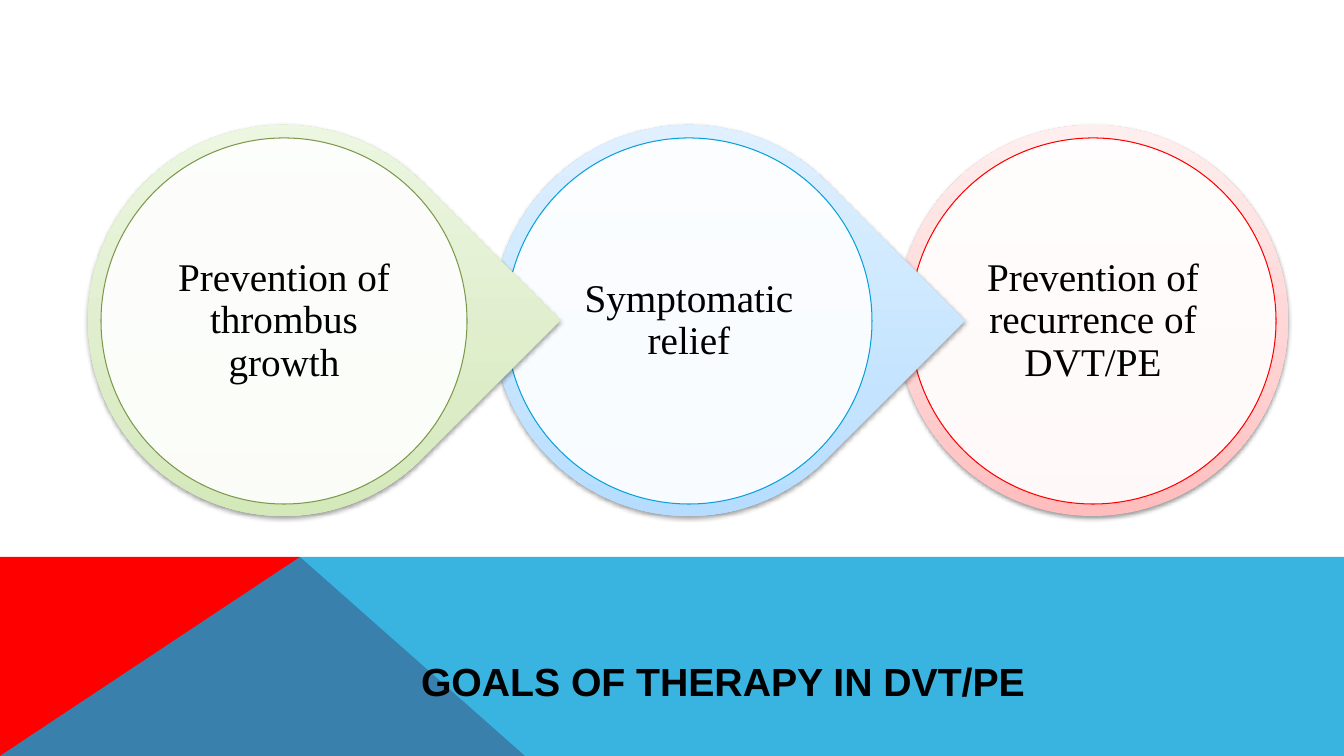
from pptx import Presentation
from pptx.dml.color import RGBColor
from pptx.enum.shapes import MSO_SHAPE as Shape
from pptx.enum.text import MSO_ANCHOR as Anchor, PP_ALIGN as Align
from pptx.oxml import parse_xml
from pptx.oxml.ns import nsdecls
from pptx.util import Emu, Pt

BLACK = RGBColor(0x00, 0x00, 0x00)
WHITE = RGBColor(0xFF, 0xFF, 0xFF)
RED = RGBColor(0xFF, 0x00, 0x00)
BLUE = RGBColor(0x08, 0xA1, 0xD9)
GREEN = RGBColor(0x7C, 0x98, 0x4A)
# Gradient colours run from bottom to top
ROSE = [RGBColor(0xFF, 0xBD, 0xBD), RGBColor(0xFF, 0xD1, 0xD1), RGBColor(0xFF, 0xEE, 0xEE)]
SKY = [RGBColor(0xAB, 0xD8, 0xFF), RGBColor(0xC3, 0xE3, 0xFF), RGBColor(0xE8, 0xF4, 0xFF)]
LIME = [RGBColor(0xCD, 0xE6, 0xAF), RGBColor(0xDC, 0xEC, 0xC7), RGBColor(0xF1, 0xF9, 0xE9)]
PX = 914400 / 100.8
NS = nsdecls("a")


def px(*nums):
    return [Emu(round(n * PX)) for n in nums]


def paint(shape, color, alpha=100):
    """Fill a shape with one colour at the given opacity in percent."""
    shape.shadow.inherit = False
    shape.fill.solid()
    shape.fill.fore_color.rgb = color
    if alpha < 100:
        tint = shape.fill._xPr.solidFill[0]
        tint.append(parse_xml(f'<a:alpha {NS} val="{alpha * 1000}"/>'))


deck = Presentation()
deck.slide_width, deck.slide_height = px(1344, 756)
slide = deck.slides.add_slide(deck.slide_layouts[5])
shapes = slide.shapes
title = shapes.title

# Bottom band: red wedge under a translucent blue sheet, both behind the title
bands = [
    ([(0, 756), (0, 557), (300, 557), (525, 756)], RED, 100),
    ([(0, 756), (300, 557), (1344, 557), (1344, 756)], BLUE, 80),
]
for points, color, alpha in bands:
    path = shapes.build_freeform(*points[0], scale=PX)
    path.add_line_segments(points[1:], close=True)
    band = path.convert_to_shape()
    paint(band, color, alpha)
    band.line.fill.background()
    title._element.addprevious(band._element)

title.left, title.top, title.width, title.height = px(170, 650, 1106, 61)
frame = title.text_frame
frame.text = "GOALS OF THERAPY IN DVT/PE"
frame.vertical_anchor = Anchor.MIDDLE
head = frame.paragraphs[0]
head.alignment = Align.CENTER
head.font.name, head.font.size, head.font.bold = "Arial", Pt(28), True
head.font.color.rgb = BLACK

# Goals, drawn from right to left so that each tip covers the next ring
goals = [
    ("Prevention of thrombus growth", Shape.TEAR, LIME, GREEN),
    ("Symptomatic relief", Shape.TEAR, SKY, BLUE),
    ("Prevention of recurrence of DVT/PE", Shape.OVAL, ROSE, RED),
]
for i, (text, kind, shades, edge) in reversed(list(enumerate(goals))):
    left = 101 + 404 * i + (i > 0)
    ring = shapes.add_shape(kind, *px(left - 13, 125, 391, 391))
    ring.rotation = 45 if kind == Shape.TEAR else 0
    ring.line.fill.background()
    stops = "".join(
        f'<a:gs pos="{pos}"><a:srgbClr val="{shade}"/></a:gs>'
        for pos, shade in zip((0, 35000, 100000), shades)
    )
    props = ring._element.spPr
    props.ln.addprevious(parse_xml(
        f'<a:gradFill {NS} rotWithShape="0"><a:gsLst>{stops}</a:gsLst>'
        '<a:lin ang="16200000" scaled="0"/></a:gradFill>'
    ))
    props.append(parse_xml(
        f'<a:effectLst {NS}><a:outerShdw blurRad="40000" dist="20000" dir="5400000" '
        'rotWithShape="0"><a:srgbClr val="000000"><a:alpha val="38000"/></a:srgbClr>'
        '</a:outerShdw></a:effectLst>'
    ))

    disc = shapes.add_shape(Shape.OVAL, *px(left, 138, 366, 366))
    paint(disc, WHITE, 90)
    disc.line.color.rgb = edge
    disc.line.width = Pt(0.75)
    frame = disc.text_frame
    frame.text = text
    frame.word_wrap = True
    frame.vertical_anchor = Anchor.MIDDLE
    frame.margin_left, frame.margin_top, frame.margin_right, frame.margin_bottom = px(4, 4, 4, 4)
    goal = frame.paragraphs[0]
    goal.alignment = Align.CENTER
    goal.line_spacing = 0.9
    goal.font.name, goal.font.size = "Times New Roman", Pt(28)
    goal.font.color.rgb = BLACK

deck.save("out.pptx")
